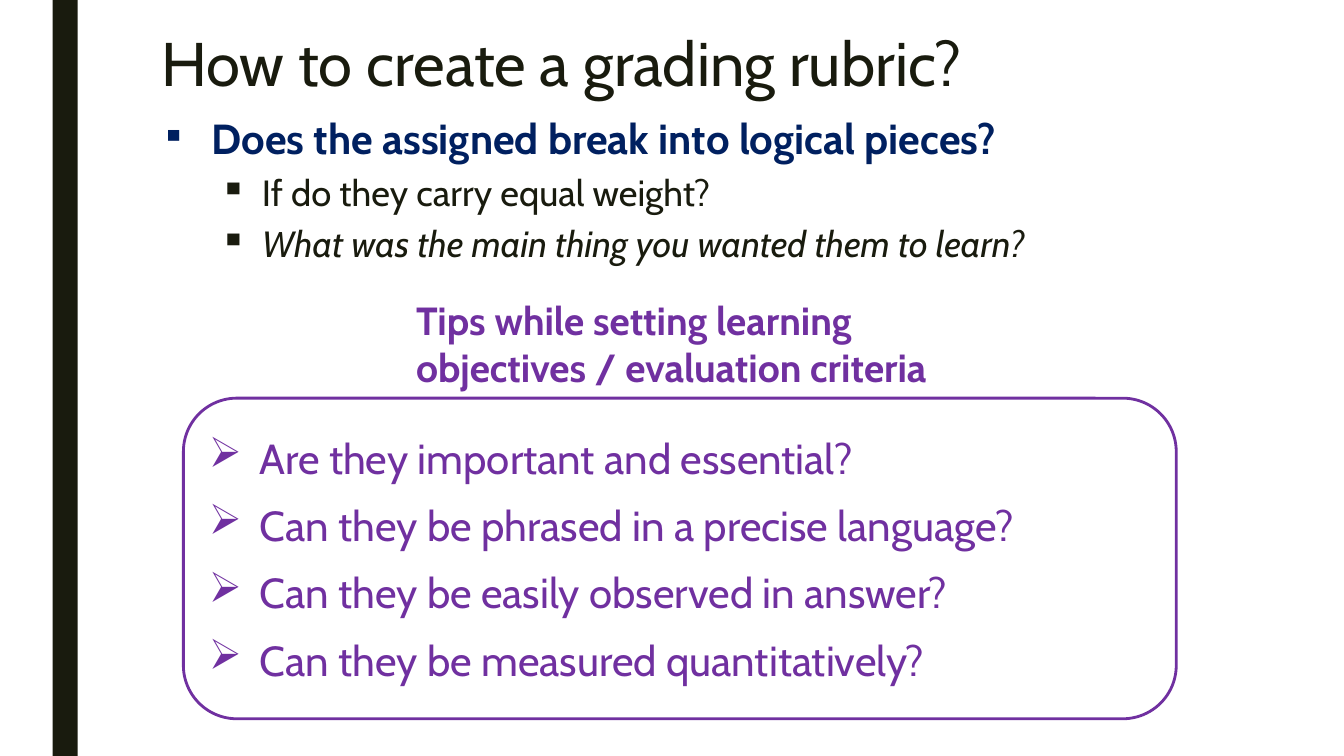
from lxml.etree import SubElement
from pptx import Presentation
from pptx.dml.color import RGBColor
from pptx.enum.shapes import MSO_SHAPE
from pptx.enum.text import MSO_ANCHOR, PP_ALIGN
from pptx.oxml.ns import qn
from pptx.util import Pt

THEME = {
    "font": "Cabin",
    "ink": RGBColor.from_string("191B0E"),
    "navy": RGBColor.from_string("002060"),
    "purple": RGBColor.from_string("7030A0"),
    "title": Pt(44),
    "question": Pt(30),
    "detail": Pt(26),
    "tips": Pt(28),
}

TITLE = "How to create a grading rubric?"
QUESTION = "Does the assigned break into logical pieces?"
DETAILS = [
    ("If do they carry equal weight?", False),
    ("What was the main thing you wanted them to learn?", True),
]
TIPS_HEADING = "Tips while setting learning objectives / evaluation criteria"
TIPS = [
    "Are they important and essential?",
    "Can they be phrased in a precise language?",
    "Can they be easily observed in answer?",
    "Can they be measured quantitatively?",
]

# left, top, width, height in points
SIDEBAR = (37.5, 0, 18, 540)
TITLE_AREA = (108, 21, 756, 71)
QUESTION_AREA = (108, 80, 756, 137.5)
TIPS_HEADING_AREA = (287.3, 216.7, 396.7, 57.6)
TIPS_AREA = (131, 284.4, 709.2, 229)

# font size, colour and emphasis; paragraph spacing; bullet
TITLE_STYLE = {
    "font": {"size": THEME["title"], "color": THEME["ink"]},
    "spacing": {"line_spacing": 0.89},
}
QUESTION_STYLE = {
    "font": {"size": THEME["question"], "color": THEME["navy"], "bold": True},
    "spacing": {"line_spacing": 0.94, "space_before": Pt(10), "space_after": Pt(2)},
    "bullet": {"char": "▪", "indent": 36, "hang": 36, "percent": 80},
}
DETAIL_STYLE = {
    "font": {"size": THEME["detail"], "color": THEME["ink"]},
    "spacing": {"level": 1, "line_spacing": 0.94, "space_before": Pt(5), "space_after": Pt(2)},
    "bullet": {"char": "▪", "indent": 72, "hang": 30, "percent": 100},
}
TIPS_HEADING_STYLE = {
    "font": {"size": THEME["tips"], "color": THEME["purple"], "bold": True},
}
TIP_STYLE = {
    "font": {"size": THEME["question"], "color": THEME["purple"]},
    "spacing": {"space_after": Pt(12)},
    "bullet": {"char": "➢", "indent": 36, "hang": 36, "percent": 100},
}


def set_all(target, values):
    for name, value in values.items():
        setattr(target, name, value)


def add_bullet(paragraph, char, indent, hang, percent):
    properties = paragraph._p.get_or_add_pPr()
    properties.set("marL", str(Pt(indent)))
    properties.set("indent", str(-Pt(hang)))
    SubElement(properties, qn("a:buSzPct"), val=str(percent * 1000))
    SubElement(properties, qn("a:buChar"), char=char)


def write(frame, lines, anchor):
    """Fill a text frame with (text, style, italic) lines."""
    set_all(frame, {"word_wrap": True, "vertical_anchor": anchor})
    for number, (text, style, italic) in enumerate(lines):
        paragraph = frame.add_paragraph() if number else frame.paragraphs[0]
        set_all(paragraph, {"alignment": PP_ALIGN.LEFT, **style.get("spacing", {})})
        if "bullet" in style:
            add_bullet(paragraph, **style["bullet"])
        run = paragraph.add_run()
        run.text = text
        font = {"name": THEME["font"], "italic": italic, **style["font"]}
        run.font.color.rgb = font.pop("color")
        set_all(run.font, font)


def add_panel(slide, preset, area, fill=None, line=None):
    panel = slide.shapes.add_shape(preset, *map(Pt, area))
    panel.shadow.inherit = False
    if fill is None:
        panel.fill.background()
    else:
        panel.fill.solid()
        panel.fill.fore_color.rgb = fill
    if line is None:
        panel.line.fill.background()
    else:
        panel.line.color.rgb = line
        panel.line.width = Pt(2)
    return panel


def add_text(slide, area, lines):
    box = slide.shapes.add_textbox(*map(Pt, area))
    write(box.text_frame, lines, MSO_ANCHOR.TOP)


def main():
    deck = Presentation()
    set_all(deck, {"slide_width": Pt(960), "slide_height": Pt(540)})
    slide = deck.slides.add_slide(deck.slide_layouts[6])

    add_panel(slide, MSO_SHAPE.RECTANGLE, SIDEBAR, fill=THEME["ink"])
    add_text(slide, TITLE_AREA, [(TITLE, TITLE_STYLE, False)])
    details = [(text, DETAIL_STYLE, italic) for text, italic in DETAILS]
    add_text(slide, QUESTION_AREA, [(QUESTION, QUESTION_STYLE, False), *details])

    tips = add_panel(slide, MSO_SHAPE.ROUNDED_RECTANGLE, TIPS_AREA, line=THEME["purple"])
    write(tips.text_frame, [(tip, TIP_STYLE, False) for tip in TIPS], MSO_ANCHOR.MIDDLE)
    heading = add_panel(slide, MSO_SHAPE.ROUNDED_RECTANGLE, TIPS_HEADING_AREA)
    write(heading.text_frame, [(TIPS_HEADING, TIPS_HEADING_STYLE, False)], MSO_ANCHOR.MIDDLE)

    deck.save("out.pptx")


if __name__ == "__main__":
    main()
